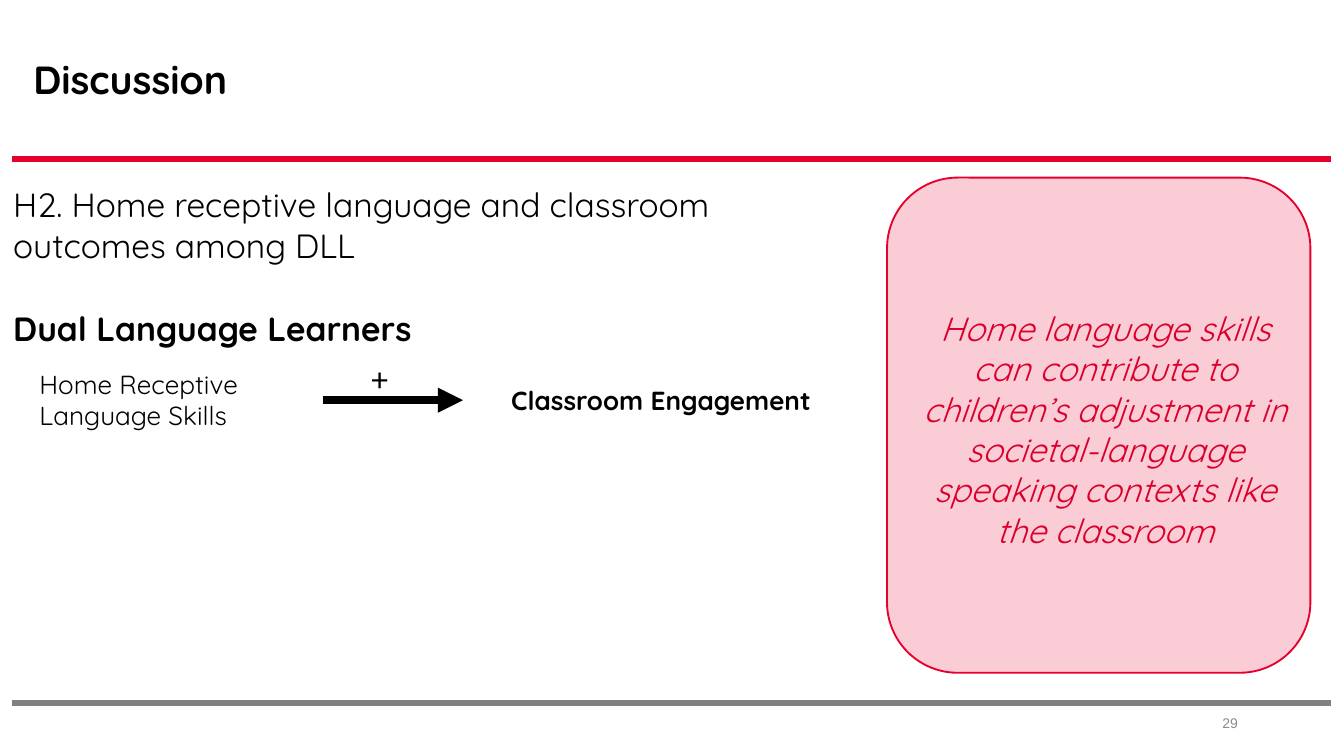
from dataclasses import dataclass

from lxml import etree
from pptx import Presentation
from pptx import util as u
from pptx.dml.color import RGBColor
from pptx.enum import shapes, text
from pptx.oxml import ns

WIDTH, HEIGHT = 10, 5.625
FONT = "Quicksand"
BLACK, RED, QUOTE_RED, GREY, NUMBER_GREY = "000000", "E6002D", "DB002C", "808080", "8C8C8C"


@dataclass
class Box:
    """A rectangle in inches that hands out areas of itself by share."""
    left: float
    top: float
    width: float
    height: float

    def area(self, x, y, w, h):
        """Return the box at the given shares of this one."""
        return Box(self.left + x * self.width, self.top + y * self.height,
                   w * self.width, h * self.height)

    def emu(self):
        """Return left, top, width and height as lengths."""
        return [u.Inches(v) for v in (self.left, self.top, self.width, self.height)]


def color(hex_string):
    """Turn a hex string into a colour."""
    return RGBColor.from_string(hex_string)


def add_text(slide, box, lines, size, font=FONT, ink=BLACK, bold=False, italic=False,
             align=text.PP_ALIGN.LEFT, anchor=text.MSO_ANCHOR.TOP):
    """Add a wrapped text box with one paragraph per line and return its paragraphs."""
    frame = slide.shapes.add_textbox(*box.emu()).text_frame
    frame.word_wrap = True
    frame.vertical_anchor = anchor
    frame.text = "\n".join(lines)
    for paragraph in frame.paragraphs:
        paragraph.alignment = align
        for run in paragraph.runs:
            run.font.name, run.font.size = font, u.Pt(size)
            run.font.bold, run.font.italic = bold, italic
            run.font.color.rgb = color(ink)
    return frame.paragraphs


def add_rule(slide, box, ink, weight):
    """Draw a line along the top of the box and return it."""
    left, top, width, _ = box.emu()
    rule = slide.shapes.add_connector(shapes.MSO_CONNECTOR.STRAIGHT, left, top, left + width, top)
    rule.line.color.rgb = color(ink)
    rule.line.width = u.Pt(weight)
    etree.SubElement(rule._element.spPr, ns.qn("a:effectLst"))
    return rule


def add_header(slide, box):
    """Place the title above the red rule."""
    add_text(slide, box.area(0.015, 0.31, 0.87, 0.64), ["Discussion"], 21, bold=True)
    add_rule(slide, box.area(0.009, 1, 0.981, 0), "E6002E", 3)


def add_hypothesis(slide, box):
    """Place the hypothesis and the path from home skills to engagement."""
    _, group = add_text(slide, box.area(0, 0, 0.92, 0.37), [
        "H2. Home receptive language and classroom outcomes among DLL",
        "Dual Language Learners"], 18)
    group.space_before = u.Pt(23)
    group.runs[0].font.bold = True
    add_text(slide, box.area(0.03, 0.38, 0.3, 0.16), ["Home Receptive", "Language Skills"], 14)
    add_text(slide, box.area(0.41, 0.36, 0.05, 0.11), ["+"], 18, font="Calibri")
    arrow = add_rule(slide, box.area(0.37, 0.46, 0.16, 0), BLACK, 4.5)
    line = arrow._element.spPr.find(ns.qn("a:ln"))
    etree.SubElement(line, ns.qn("a:tailEnd"), type="triangle")
    add_text(slide, box.area(0.57, 0.41, 0.43, 0.1), ["Classroom Engagement"], 14,
             bold=True, anchor=text.MSO_ANCHOR.MIDDLE)


def add_takeaway(slide, box):
    """Place the tinted card and its closing statement."""
    card = slide.shapes.add_shape(shapes.MSO_SHAPE.ROUNDED_RECTANGLE, *box.emu())
    card.shadow.inherit = False
    card.fill.solid()
    card.fill.fore_color.rgb = color(RED)
    tint = card._element.spPr.find(ns.qn("a:solidFill")).find(ns.qn("a:srgbClr"))
    etree.SubElement(tint, ns.qn("a:alpha"), val="20000")
    card.line.color.rgb = color(RED)
    card.line.width = u.Pt(1)
    add_text(slide, box.area(0.02, 0.25, 0.99, 0.52), [
        "Home language skills can contribute to children’s adjustment in "
        "societal-language speaking contexts like the classroom"],
        18, ink=QUOTE_RED, italic=True, align=text.PP_ALIGN.CENTER)


def add_footer(slide, box):
    """Place the grey rule and the page number."""
    add_rule(slide, box.area(0.009, 0, 0.981, 0), GREY, 3)
    add_text(slide, box.area(0.706, 0, 0.225, 0.74), ["29"], 7.5, font="Arial", ink=NUMBER_GREY,
             align=text.PP_ALIGN.RIGHT, anchor=text.MSO_ANCHOR.MIDDLE)


def main():
    """Build the discussion slide and save it."""
    deck = Presentation()
    deck.slide_width, deck.slide_height = u.Inches(WIDTH), u.Inches(HEIGHT)
    slide = deck.slides.add_slide(deck.slide_layouts[6])
    page = Box(0, 0, WIDTH, HEIGHT)
    add_header(slide, page.area(0, 0, 1, 0.21))
    add_hypothesis(slide, page.area(0, 0.235, 0.65, 0.64))
    add_takeaway(slide, page.area(0.66, 0.235, 0.315, 0.655))
    add_footer(slide, page.area(0, 0.93, 1, 0.07))
    deck.save("out.pptx")


if __name__ == "__main__":
    main()
